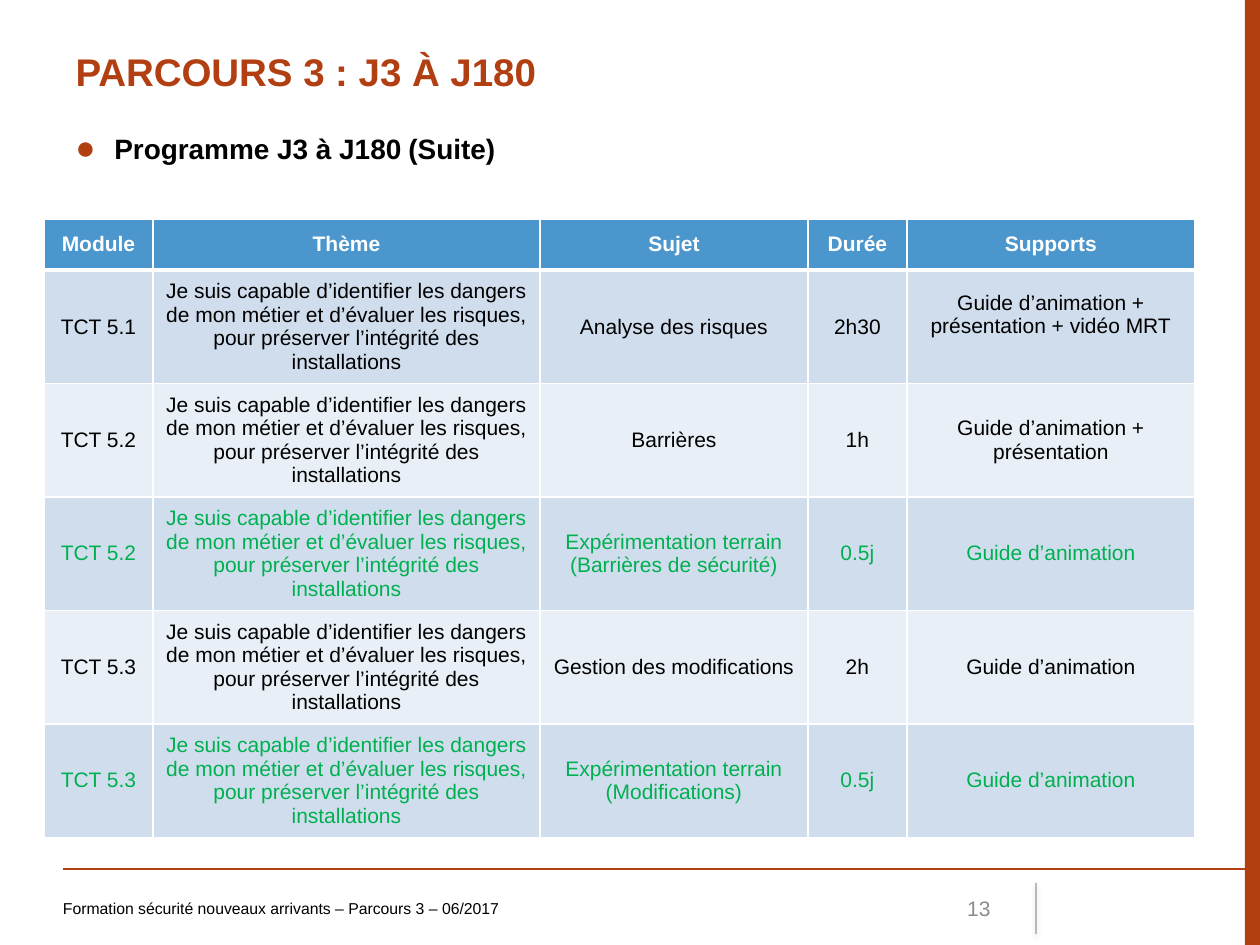
from dataclasses import dataclass

from lxml import etree
from pptx import Presentation
from pptx.dml.color import RGBColor
from pptx.enum.shapes import MSO_CONNECTOR as Connector, MSO_SHAPE as Shape
from pptx.enum.text import MSO_ANCHOR as Anchor, PP_ALIGN as Align
from pptx.oxml import parse_xml
from pptx.oxml.ns import nsdecls, qn
from pptx.util import Pt

TITLE = "PARCOURS 3 : J3 À J180"
SUBTITLE = [("Programme J3 à J180", 16), (" ", 14), ("(Suite)", 16)]
FOOTER = "Formation sécurité nouveaux arrivants – Parcours 3 – 06/2017"
PAGE_NUMBER = "13"

THEME_TEXT = (
    "Je suis capable d’identifier les dangers de mon métier et d’évaluer "
    "les risques, pour préserver l’intégrité des installations"
)
GUIDE = "Guide d’animation"
FIELD_TRIAL = "Expérimentation terrain"
HEADERS = ["Module", "Thème", "Sujet", "Durée", "Supports"]
MODULES = [
    ("TCT 5.1", "Analyse des risques", "2h30", GUIDE + " + présentation + vidéo MRT"),
    ("TCT 5.2", "Barrières", "1h", GUIDE + " + présentation"),
    ("TCT 5.2", FIELD_TRIAL + "\n(Barrières de sécurité)", "0.5j", GUIDE),
    ("TCT 5.3", "Gestion des modifications", "2h", GUIDE),
    ("TCT 5.3", FIELD_TRIAL + "\n(Modifications)", "0.5j", GUIDE),
]
COLUMN_WIDTHS = [109, 387, 268, 99, 288]
HEADER_HEIGHT, ROW_HEIGHT = 51, 107
TABLE_LEFT, TABLE_TOP = 44, 219
MARGIN, CONTENT_WIDTH = 63, 1133
SLIDE_WIDTH, SLIDE_HEIGHT = 1260, 945
BAR_WIDTH = 15
FOOTER_TOP, FOOTER_HEIGHT = 883, 51


@dataclass(frozen=True)
class Theme:
    font: str = "Arial"
    accent: str = "B23F12"
    text: str = "000000"
    white: str = "FFFFFF"
    muted: str = "8C8C8C"
    field: str = "00B050"
    header: str = "4A96CD"
    bands: tuple = ("D0DDED", "E9EFF6")
    title_size: int = 22
    table_size: int = 12
    number_size: int = 12
    footer_size: int = 9


theme = Theme()


def px(value):
    return round(value * 914400 / 126)


def color(value):
    return RGBColor.from_string(value)


def add_run(paragraph, text, size, fill, bold=False):
    run = paragraph.add_run()
    run.text = text
    run.font.name = theme.font
    run.font.size = Pt(size)
    run.font.bold = bold
    run.font.color.rgb = color(fill)


def add_text_box(slide, left, top, width, height, anchor):
    frame = slide.shapes.add_textbox(px(left), px(top), px(width), px(height)).text_frame
    frame.word_wrap = True
    frame.vertical_anchor = anchor
    return frame


def add_line(slide, start, end, fill, width):
    line = slide.shapes.add_connector(Connector.STRAIGHT, *map(px, start + end))
    line.line.color.rgb = color(fill)
    line.line.width = Pt(width)
    effects = etree.SubElement(line._element.spPr, qn("a:effectLst"))
    return line, effects


def add_frame(slide):
    bar = slide.shapes.add_shape(
        Shape.RECTANGLE, px(SLIDE_WIDTH - BAR_WIDTH), 0, px(BAR_WIDTH), px(SLIDE_HEIGHT)
    )
    bar.shadow.inherit = False
    bar.fill.solid()
    bar.fill.fore_color.rgb = color(theme.accent)
    bar.line.fill.background()
    add_line(slide, (MARGIN, 869), (SLIDE_WIDTH, 869), theme.accent, 0.75)

    divider, effects = add_line(
        slide, (1036, FOOTER_TOP), (1036, FOOTER_TOP + FOOTER_HEIGHT), theme.text, 0.5
    )
    line_color = divider.line._ln.find(".//" + qn("a:srgbClr"))
    etree.SubElement(line_color, qn("a:alpha"), val="70000")
    effects.append(parse_xml(
        f'<a:outerShdw {nsdecls("a")} blurRad="{Pt(3.1)}" dist="{Pt(1.6)}" dir="5400000">'
        f'<a:srgbClr val="{theme.text}"><a:alpha val="38000"/></a:srgbClr></a:outerShdw>'
    ))


def add_headings(slide):
    title = slide.shapes.title
    title.left, title.top, title.width, title.height = map(px, (MARGIN, 38, CONTENT_WIDTH, 87))
    frame = title.text_frame
    frame.vertical_anchor = Anchor.TOP
    frame.margin_top = px(10)
    paragraph = frame.paragraphs[0]
    paragraph.alignment = Align.LEFT
    add_run(paragraph, TITLE, theme.title_size, theme.accent, True)

    frame = add_text_box(slide, MARGIN, 125, CONTENT_WIDTH, 59, Anchor.TOP)
    paragraph = frame.paragraphs[0]
    properties = paragraph._p.get_or_add_pPr()
    properties.set("marL", str(px(39)))
    properties.set("indent", str(-px(39)))
    bullet_color = etree.SubElement(properties, qn("a:buClr"))
    etree.SubElement(bullet_color, qn("a:srgbClr"), val=theme.accent)
    etree.SubElement(properties, qn("a:buSzPct"), val="120000")
    etree.SubElement(properties, qn("a:buFont"), typeface=theme.font)
    etree.SubElement(properties, qn("a:buChar"), char="●")
    paragraph.space_after = Pt(3)
    for text, size in SUBTITLE:
        add_run(paragraph, text, size, theme.text, True)


def set_borders(cell, bottom):
    properties = cell._tc.get_or_add_tcPr()
    widths = [("lnL", 1), ("lnR", 1), ("lnT", 1), ("lnB", bottom)]
    for index, (side, width) in enumerate(widths):
        properties.insert(index, parse_xml(
            f'<a:{side} {nsdecls("a")} w="{Pt(width)}"><a:solidFill>'
            f'<a:srgbClr val="{theme.white}"/></a:solidFill></a:{side}>'
        ))


def fill_cell(cell, text, fill, text_color, bold, bottom):
    cell.fill.solid()
    cell.fill.fore_color.rgb = color(fill)
    cell.vertical_anchor = Anchor.MIDDLE
    set_borders(cell, bottom)
    frame = cell.text_frame
    for index, line in enumerate(text.split("\n")):
        paragraph = frame.add_paragraph() if index else frame.paragraphs[0]
        paragraph.alignment = Align.CENTER
        add_run(paragraph, line, theme.table_size, text_color, bold)


def add_program(slide):
    heights = [HEADER_HEIGHT] + [ROW_HEIGHT] * len(MODULES)
    table = slide.shapes.add_table(
        len(heights), len(HEADERS), px(TABLE_LEFT), px(TABLE_TOP),
        px(sum(COLUMN_WIDTHS)), px(sum(heights)),
    ).table
    for column, width in zip(table.columns, COLUMN_WIDTHS):
        column.width = px(width)
    for row, height in zip(table.rows, heights):
        row.height = px(height)
    for cell, text in zip(table.rows[0].cells, HEADERS):
        fill_cell(cell, text, theme.header, theme.white, True, 3)
    for index, (module, subject, duration, support) in enumerate(MODULES):
        text_color = theme.field if subject.startswith(FIELD_TRIAL) else theme.text
        values = (module, THEME_TEXT, subject, duration, support)
        for cell, text in zip(table.rows[index + 1].cells, values):
            fill_cell(cell, text, theme.bands[index % 2], text_color, False, 1)
    table.cell(1, len(HEADERS) - 1).margin_bottom = px(30)


def add_footer(slide):
    frame = add_text_box(slide, 903, FOOTER_TOP, 100, FOOTER_HEIGHT, Anchor.MIDDLE)
    frame.paragraphs[0].alignment = Align.RIGHT
    add_run(frame.paragraphs[0], PAGE_NUMBER, theme.number_size, theme.muted)
    frame = add_text_box(slide, MARGIN, FOOTER_TOP, 766, FOOTER_HEIGHT, Anchor.MIDDLE)
    frame.margin_left = 0
    add_run(frame.paragraphs[0], FOOTER, theme.footer_size, theme.text)


presentation = Presentation()
presentation.slide_width, presentation.slide_height = px(SLIDE_WIDTH), px(SLIDE_HEIGHT)
slide = presentation.slides.add_slide(presentation.slide_layouts[5])
add_frame(slide)
add_headings(slide)
add_program(slide)
add_footer(slide)
presentation.save("out.pptx")
